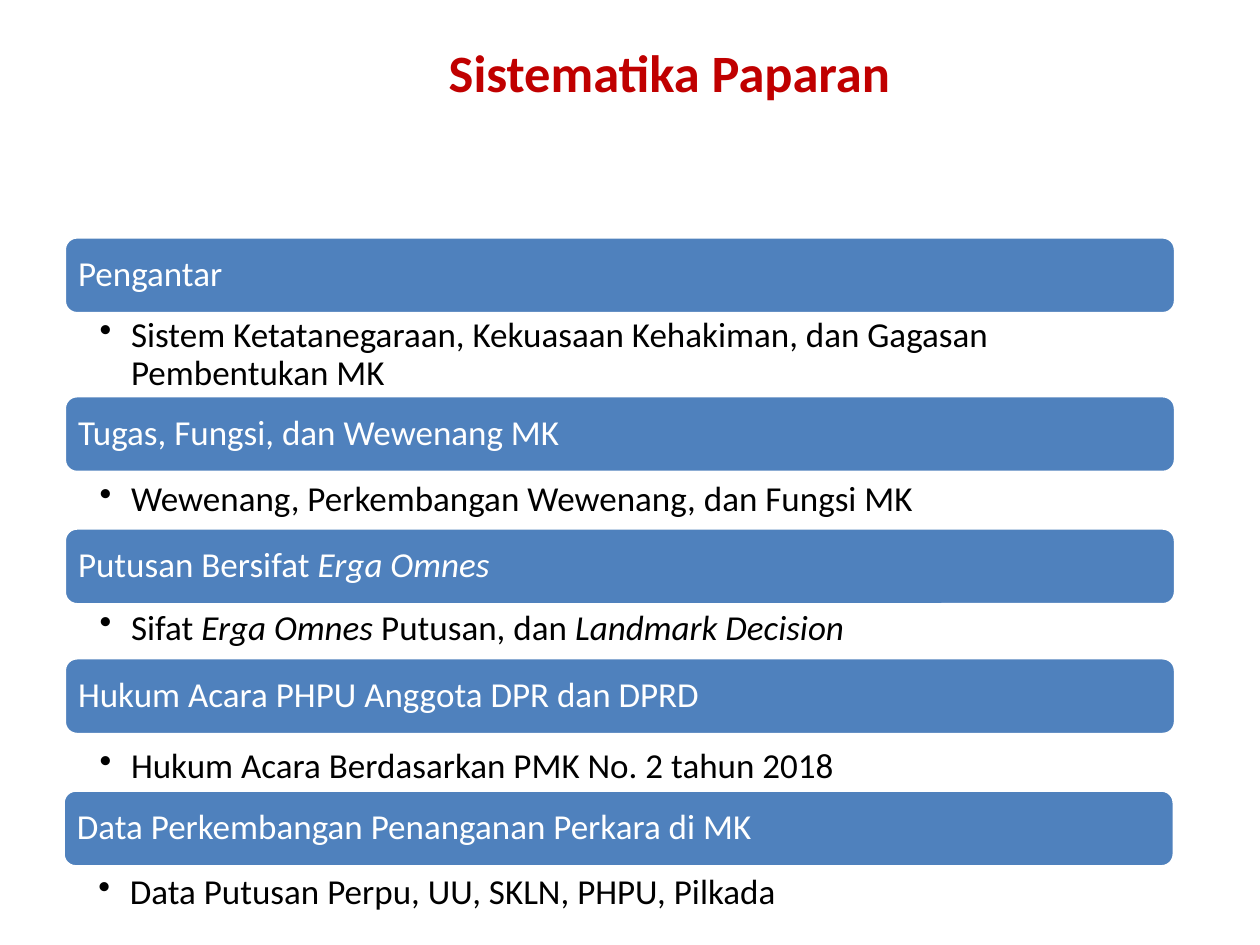
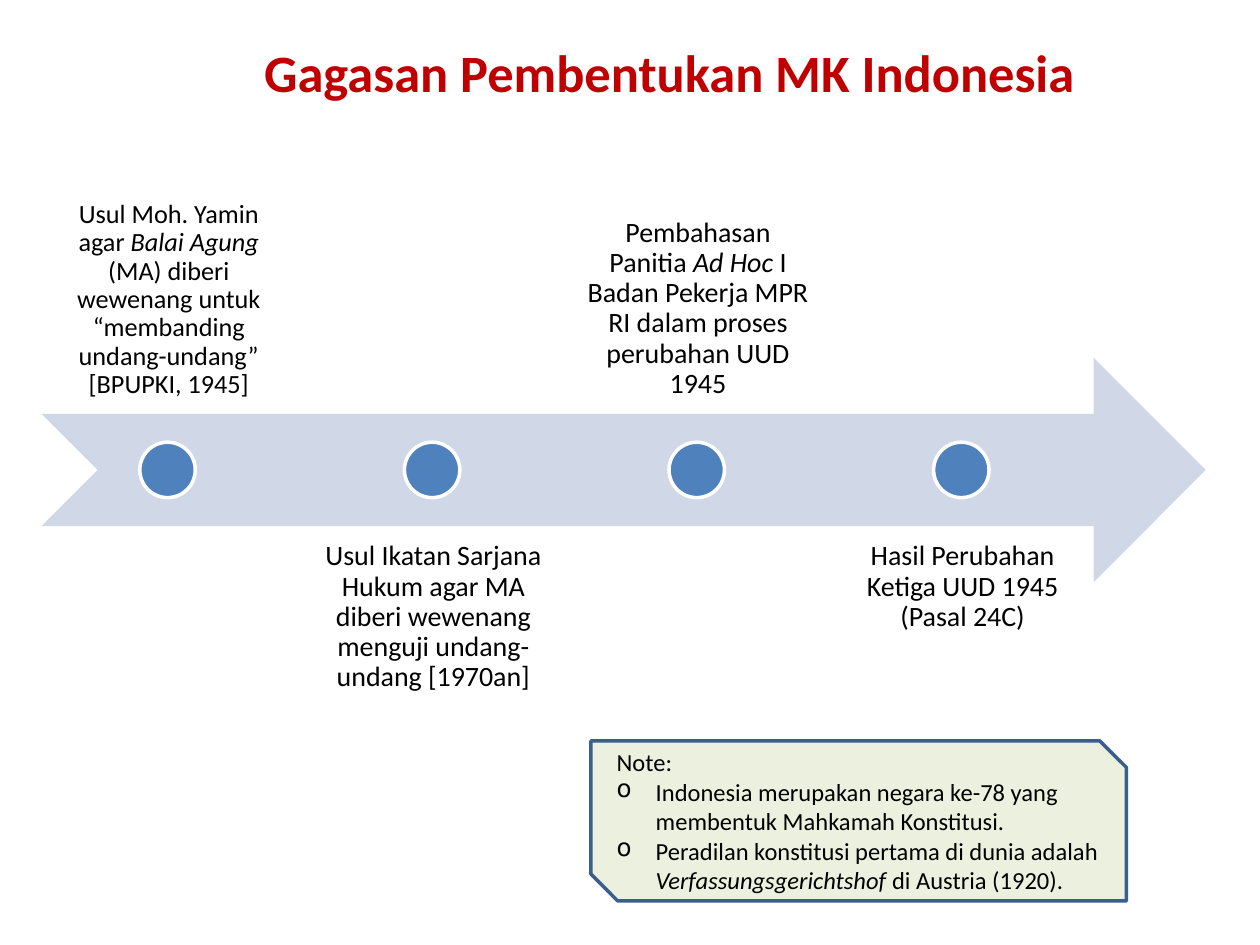
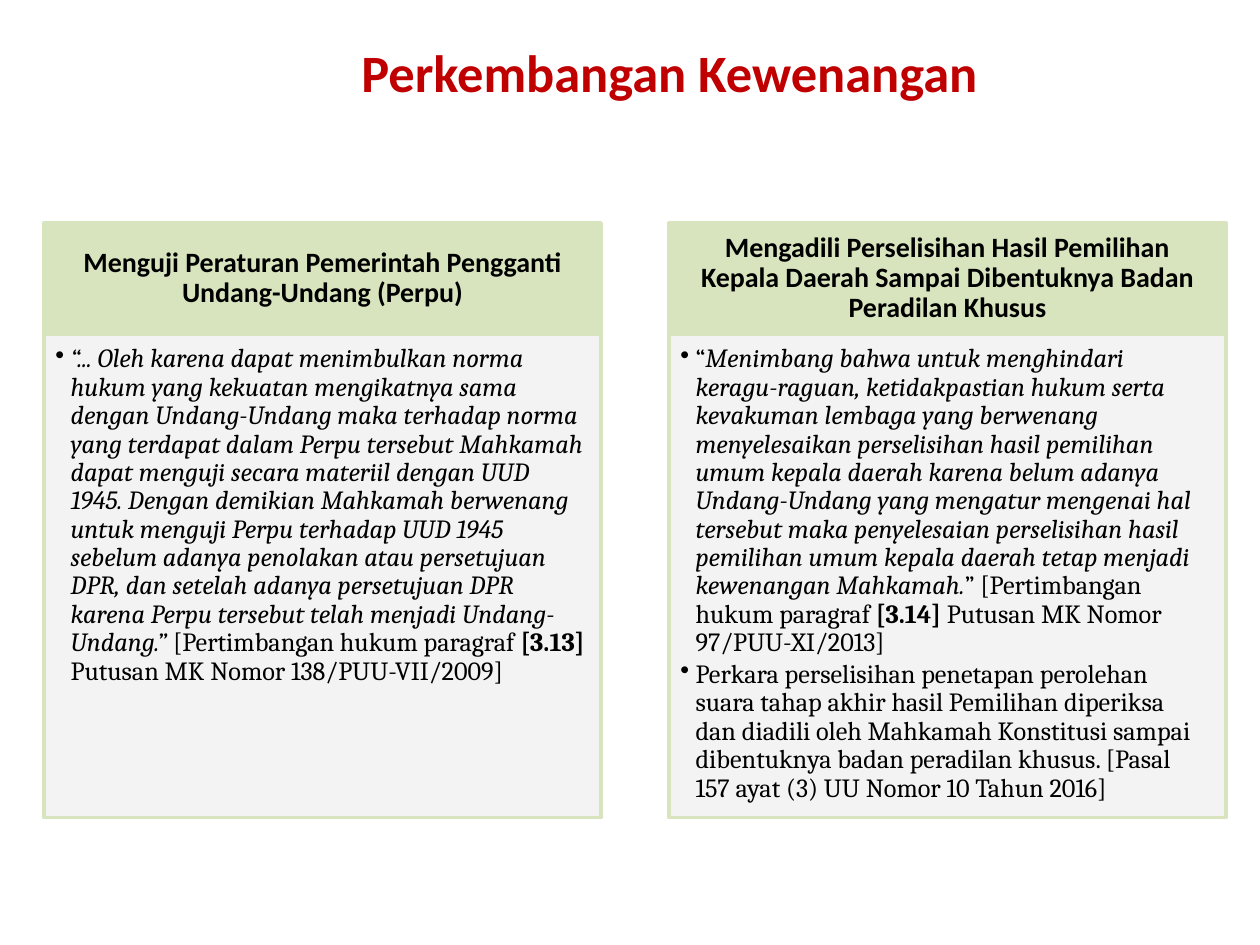
from lxml import etree
from pptx import Presentation
from pptx import util as u
from pptx.dml.color import RGBColor
from pptx.enum import shapes, text
from pptx.oxml.ns import qn

RED, BLUE, WHITE, BLACK = "C00000", "4F81BD", "FFFFFF", "000000"
PALE_BLUE, NAVY = "D0D8E8", "3A5F8C"
GREEN, PALE_GREEN, GREY = "D7E4BD", "EBF1DE", "F2F2F2"
MSO = shapes.MSO_SHAPE
ANCHOR = text.MSO_ANCHOR
CENTER, LEFT = text.PP_ALIGN.CENTER, text.PP_ALIGN.LEFT


def add_box(s, box, kind=None, fill=None, line=None):
    box = [u.Inches(v) for v in box]
    if kind is None:
        return s.shapes.add_textbox(*box)
    sp = s.shapes.add_shape(kind, *box)
    sp.shadow.inherit = False
    sp.fill.solid()
    sp.fill.fore_color.rgb = RGBColor.from_string(fill)
    if line:
        sp.line.color.rgb = RGBColor.from_string(line)
        sp.line.width = u.Pt(2)
    else:
        sp.line.fill.background()
    return sp


def write(sp, paragraphs, size, color=BLACK, font="Calibri", bold=False,
          align=LEFT, anchor=ANCHOR.TOP, insets=(0.1, 0.05, 0.1, 0.05),
          bullet=None, indent=0, spacing=None, after=0):
    tf = sp.text_frame
    tf.word_wrap = True
    tf.vertical_anchor = anchor
    tf.margin_left, tf.margin_top, tf.margin_right, tf.margin_bottom = [
        u.Inches(v) for v in insets]
    for i, runs in enumerate(paragraphs):
        p = tf.paragraphs[0] if i == 0 else tf.add_paragraph()
        p.alignment = align
        p.space_after = u.Pt(after)
        if spacing:
            p.line_spacing = spacing
        if bullet and runs[0] != ("Note:", ""):
            pPr = p._p.get_or_add_pPr()
            pPr.set("marL", str(u.Inches(indent)))
            pPr.set("indent", str(-u.Inches(indent)))
            etree.SubElement(pPr, qn("a:buChar")).set("char", bullet)
        for words, style in runs:
            r = p.add_run()
            r.text = words
            r.font.name = font
            r.font.size = u.Pt(size)
            r.font.bold = bold or style == "b"
            r.font.italic = style == "i"
            r.font.color.rgb = RGBColor.from_string(color)


prs = Presentation()
prs.slide_width, prs.slide_height = u.Inches(10), u.Inches(7.5)

slides = []
for title in ["Sistematika Paparan", "Gagasan Pembentukan MK Indonesia",
              "Perkembangan Kewenangan"]:
    s = prs.slides.add_slide(prs.slide_layouts[6])
    sp = add_box(s, (1.3, 0.13, 8.03, 0.87), MSO.ROUNDED_RECTANGLE, WHITE, WHITE)
    write(sp, [[(title, "")]], 30, RED, bold=True, align=CENTER, anchor=ANCHOR.MIDDLE)
    slides.append(s)
agenda, timeline, authority = slides

topics = [
    (0.51, 1.88, 2.49, [("Pengantar", "")],
     [("Sistem Ketatanegaraan, Kekuasaan Kehakiman, dan Gagasan Pembentukan MK", "")]),
    (0.51, 3.14, 3.79, [("Tugas, Fungsi, dan Wewenang MK", "")],
     [("Wewenang, Perkembangan Wewenang, dan Fungsi MK", "")]),
    (0.51, 4.19, 4.81, [("Putusan Bersifat ", ""), ("Erga Omnes", "i")],
     [("Sifat ", ""), ("Erga Omnes ", "i"), ("Putusan, dan ", ""),
      ("Landmark Decision", "i")]),
    (0.51, 5.22, 5.91, [("Hukum Acara PHPU Anggota DPR dan DPRD", "")],
     [("Hukum Acara Berdasarkan PMK No. 2 tahun 2018", "")]),
    (0.5, 6.27, 6.91, [("Data Perkembangan Penanganan Perkara di MK", "")],
     [("Data Putusan Perpu, UU, SKLN, PHPU, Pilkada", "")]),
]
for left, bar_top, detail_top, heading, detail in topics:
    sp = add_box(agenda, (left, bar_top, 8.82, 0.61), MSO.ROUNDED_RECTANGLE, BLUE, WHITE)
    write(sp, [heading], 20, WHITE, anchor=ANCHOR.MIDDLE, insets=[0.08] * 4, spacing=0.9)
    sp = add_box(agenda, (left, detail_top, 8.82, 0.54))
    write(sp, [detail], 20, insets=(0.28, 0.03, 0.16, 0.03), bullet="•",
          indent=0.25, spacing=0.9)

add_box(timeline, (0.33, 2.84, 9.24, 1.78), MSO.NOTCHED_RIGHT_ARROW, PALE_BLUE)
events = [
    (15, [("Usul Moh. Yamin agar ", ""), ("Balai Agung", "i"),
          (" (MA) diberi wewenang untuk “membanding undang-undang” [BPUPKI, 1945]", "")]),
    (16, [("Usul Ikatan Sarjana Hukum agar MA diberi wewenang menguji "
           "undang-undang [1970an]", "")]),
    (16, [("Pembahasan Panitia ", ""), ("Ad Hoc", "i"),
          (" I Badan Pekerja MPR RI dalam proses perubahan UUD 1945", "")]),
    (16, [("Hasil Perubahan Ketiga UUD 1945 (Pasal 24C)", "")]),
]
for i, (size, event) in enumerate(events):
    left = 0.34 + 2.1 * i
    top, anchor = (4.18, ANCHOR.TOP) if i % 2 else (1.51, ANCHOR.BOTTOM)
    sp = add_box(timeline, (left, top, 2, 1.78))
    write(sp, [event], size, align=CENTER, anchor=anchor, insets=[0.12] * 4, spacing=0.9)
    add_box(timeline, (left + 0.77, 3.51, 0.44, 0.44), MSO.OVAL, BLUE, WHITE)

sp = add_box(timeline, (4.69, 5.88, 4.25, 1.27), MSO.SNIP_2_DIAG_RECTANGLE, PALE_GREEN, NAVY)
write(sp, [
    [("Note:", "")],
    [("Indonesia merupakan negara ke-78 yang membentuk Mahkamah Konstitusi.", "")],
    [("Peradilan konstitusi pertama di dunia adalah ", ""),
     ("Verfassungsgerichtshof", "i"), (" di Austria (1920).", "")],
], 14, anchor=ANCHOR.MIDDLE, bullet="o", indent=0.31)

columns = [
    (0.35, "Menguji Peraturan Pemerintah Pengganti Undang-Undang (Perpu)", [
        [("“... Oleh karena dapat menimbulkan norma hukum yang kekuatan mengikatnya "
          "sama dengan Undang-Undang maka terhadap norma yang terdapat dalam Perpu "
          "tersebut Mahkamah dapat menguji secara materiil dengan UUD 1945. Dengan "
          "demikian Mahkamah berwenang untuk menguji Perpu terhadap UUD 1945 sebelum "
          "adanya penolakan atau persetujuan DPR, dan setelah adanya persetujuan DPR "
          "karena Perpu tersebut telah menjadi Undang-Undang.” ", "i"),
         ("[Pertimbangan hukum paragraf ", ""), ("[3.13]", "b"),
         (" Putusan MK Nomor 138/PUU-VII/2009]", "")],
    ]),
    (5.31, "Mengadili Perselisihan Hasil Pemilihan Kepala Daerah Sampai "
           "Dibentuknya Badan Peradilan Khusus", [
        [("“", ""),
         ("Menimbang bahwa untuk menghindari keragu-raguan, ketidakpastian hukum "
          "serta kevakuman lembaga yang berwenang menyelesaikan perselisihan hasil "
          "pemilihan umum kepala daerah karena belum adanya Undang-Undang yang "
          "mengatur mengenai hal tersebut maka penyelesaian perselisihan hasil "
          "pemilihan umum kepala daerah tetap menjadi kewenangan Mahkamah.", "i"),
         ("” [Pertimbangan hukum paragraf ", ""), ("[3.14]", "b"),
         (" Putusan MK Nomor 97/PUU-XI/2013]", "")],
        [("Perkara perselisihan penetapan perolehan suara tahap akhir hasil Pemilihan "
          "diperiksa dan diadili oleh Mahkamah Konstitusi sampai dibentuknya badan "
          "peradilan khusus. [Pasal 157 ayat (3) UU Nomor 10 Tahun 2016]", "")],
    ]),
]
for left, heading, body in columns:
    sp = add_box(authority, (left, 1.77, 4.42, 0.88), MSO.RECTANGLE, GREEN, GREEN)
    write(sp, [[(heading, "")]], 16, bold=True, align=CENTER, anchor=ANCHOR.MIDDLE,
          insets=(0.12, 0.07, 0.12, 0.07), spacing=0.9)
    sp = add_box(authority, (left, 2.65, 4.42, 3.84), MSO.RECTANGLE, GREY, GREEN)
    color = sp._element.spPr.find(qn("a:solidFill")).find(qn("a:srgbClr"))
    etree.SubElement(color, qn("a:alpha")).set("val", "90000")
    write(sp, body, 15, font="Cambria", insets=(0.09, 0.09, 0.12, 0.13),
          bullet="•", indent=0.12, spacing=0.9, after=2)

prs.save("out.pptx")
